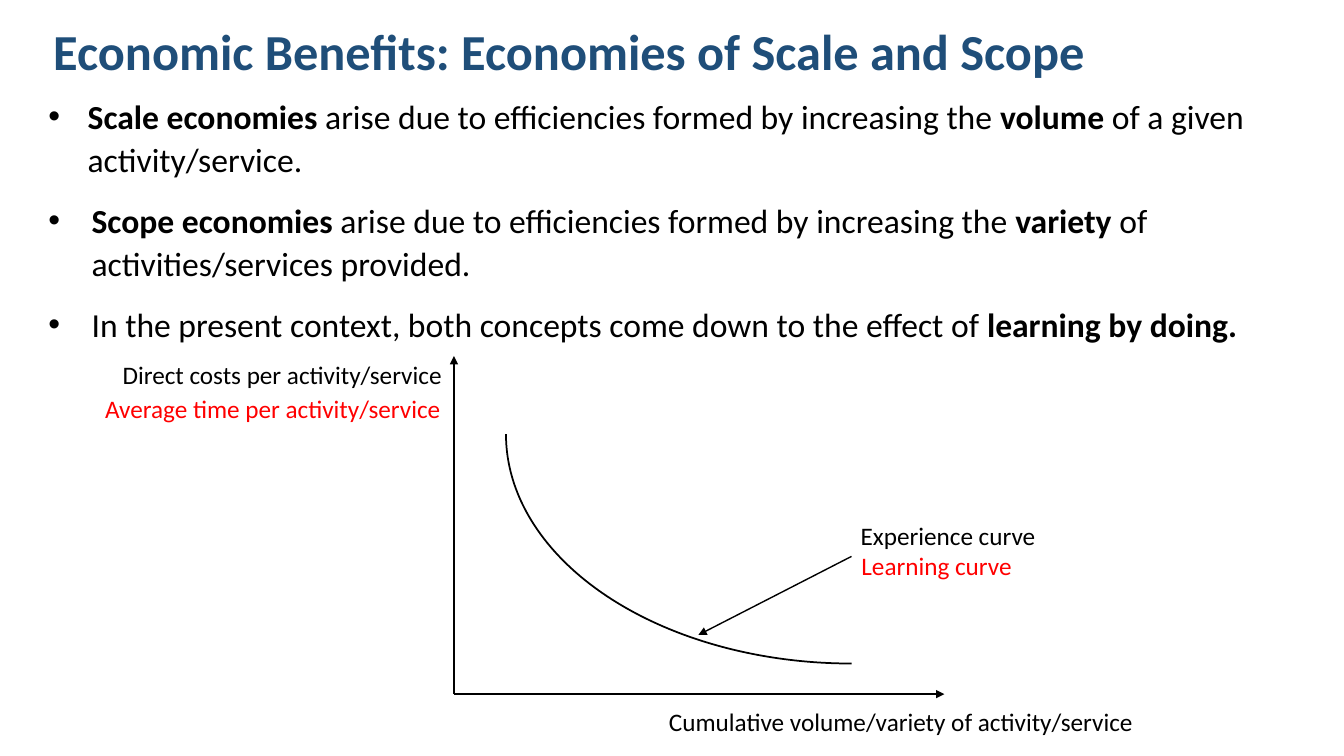
from lxml.etree import SubElement
from pptx import Presentation
from pptx.dml.color import RGBColor
from pptx.enum.shapes import MSO_CONNECTOR as Link, MSO_SHAPE as Preset
from pptx.enum.text import MSO_AUTO_SIZE as AutoSize
from pptx.oxml.ns import qn
from pptx.util import Cm, Pt

BLACK = RGBColor(0x00, 0x00, 0x00)
RED = RGBColor(0xFF, 0x00, 0x00)
NAVY = RGBColor(0x1F, 0x4E, 0x79)
WHITE = RGBColor(0xFF, 0xFF, 0xFF)

POINTS = [
    (0.99, [("Scale economies", True),
            (" arise due to efficiencies formed by increasing the ", False),
            ("volume", True), (" of a given activity/service.", False)]),
    (1.09, [("Scope economies", True),
            (" arise due to efficiencies formed by increasing the ", False),
            ("variety ", True), ("of activities/services provided.", False)]),
    (1.09, [("In the present context, both concepts come down to the effect of ", False),
            ("learning by doing.", True)]),
]

LABELS = [
    ("Direct costs per activity/service", 0.44, 0, 8.66, BLACK),
    ("Average time per activity/service", 0, 0.84, 9.07, RED),
    ("Experience curve", 19.04, 4.04, 4.98, BLACK),
    ("Learning curve", 19.06, 4.8, 4.34, RED),
    ("Cumulative volume/variety of activity/service", 14.21, 8.74, 12.34, BLACK),
]


def add_frame(slide, left, top, width, height, wrap=True):
    """Add a text box measured in centimetres and return its text frame."""
    frame = slide.shapes.add_textbox(Cm(left), Cm(top), Cm(width), Cm(height)).text_frame
    frame.word_wrap = wrap
    frame.auto_size = AutoSize.SHAPE_TO_FIT_TEXT
    return frame


def add_run(paragraph, words, size, color, bold=False):
    """Append one formatted run to a paragraph."""
    run = paragraph.add_run()
    run.text = words
    run.font.name = "Calibri"
    run.font.size = Pt(size)
    run.font.bold = bold
    run.font.color.rgb = color


def add_arrow(slide, start, end, weight):
    """Draw a black arrow between two points in centimetres."""
    arrow = slide.shapes.add_connector(Link.STRAIGHT, *map(Cm, start + end))
    arrow.line.color.rgb = BLACK
    arrow.line.width = Pt(weight)
    SubElement(arrow.line._get_or_add_ln(), qn("a:tailEnd"), type="triangle")
    SubElement(arrow._element.spPr, qn("a:effectLst"))


def build_title(slide, left, top, width, height):
    """Write the slide heading in its box."""
    heading = add_frame(slide, left, top, width, height).paragraphs[0]
    add_run(heading, "Economic Benefits: Economies of Scale and Scope", 36, NAVY, True)


def build_points(slide, left, top, width, height):
    """Write the bulleted statements in their box."""
    frame = add_frame(slide, left, top, width, height)
    for number, (margin, phrases) in enumerate(POINTS):
        point = frame.add_paragraph() if number else frame.paragraphs[0]
        point.line_spacing = 1.08
        point.space_before = point.space_after = Pt(6)
        properties = point._p.get_or_add_pPr()
        properties.set("marL", str(Cm(margin)))
        properties.set("indent", str(Cm(-1.27)))
        SubElement(properties, qn("a:buFont"), typeface="Arial")
        SubElement(properties, qn("a:buChar"), char="•")
        for words, bold in phrases:
            add_run(point, words, 24, BLACK, bold)


def build_curve_diagram(slide, left, top):
    """Draw the axes, the experience curve and their labels from a corner."""
    origin = (left + 9.04, top + 8.55)
    add_arrow(slide, origin, (left + 9.04, top + 0.03), 1.5)
    add_arrow(slide, origin, (left + 21.4, top + 8.55), 1.5)

    curve = slide.shapes.add_shape(
        Preset.ARC, Cm(left + 10.35), Cm(top - 3.78), Cm(17.42), Cm(11.56))
    curve.rotation = 180
    curve.shadow.inherit = False
    curve.fill.background()
    curve.line.color.rgb = BLACK
    curve.line.width = Pt(1.25)

    for words, across, down, width, color in LABELS:
        frame = add_frame(slide, left + across, top + down, width, 1.02, wrap=False)
        add_run(frame.paragraphs[0], words, 18, color)
    add_arrow(slide, (left + 19.06, top + 5.08), (left + 15.2, top + 7.06), 1)


def main():
    """Build the slide and save it."""
    deck = Presentation()
    deck.slide_width, deck.slide_height = Cm(33.87), Cm(19.05)
    slide = deck.slides.add_slide(deck.slide_layouts[6])
    slide.background.fill.solid()
    slide.background.fill.fore_color.rgb = WHITE
    build_points(slide, 0.97, 2.21, 32.28, 6.65)
    build_title(slide, 1.09, 0.38, 30.1, 1.8)
    build_curve_diagram(slide, 2.4, 8.94)
    deck.save("out.pptx")


if __name__ == "__main__":
    main()
